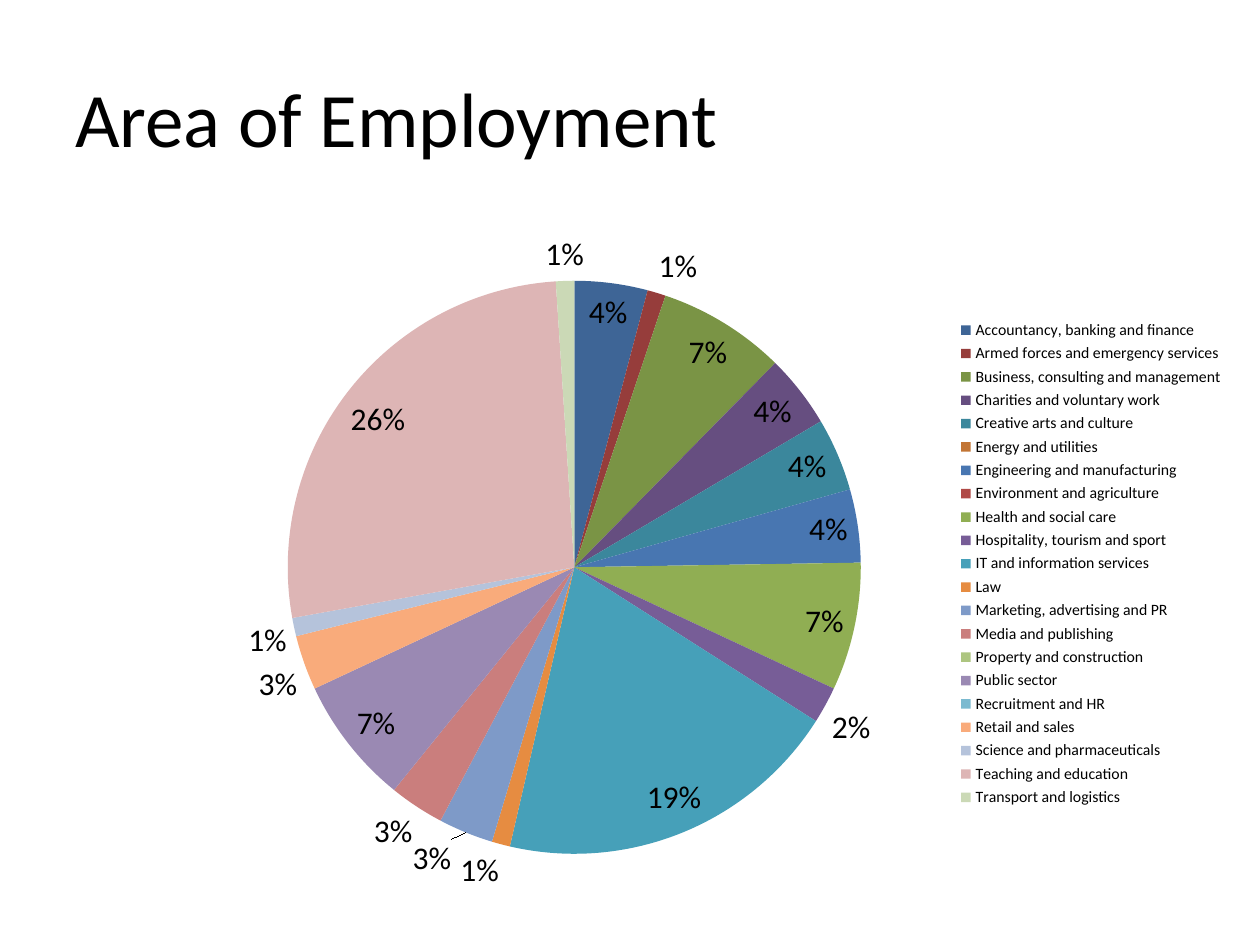
from dataclasses import dataclass

from lxml.etree import SubElement
from pptx import Presentation
from pptx.chart.data import CategoryChartData
from pptx.dml.color import RGBColor
from pptx.enum.chart import (XL_CHART_TYPE as ChartType, XL_LABEL_POSITION as LabelPos,
                             XL_LEGEND_POSITION as LegendPos)
from pptx.enum.text import MSO_ANCHOR as Anchor
from pptx.oxml.ns import qn
from pptx.util import Pt


@dataclass(frozen=True)
class Theme:
    font: str = "Calibri"
    ink: str = "000000"
    title_size: int = 44
    label_size: int = 18
    legend_size: int = 9


# Area of employment, share in percent, slice colour
EMPLOYMENT = [
    ("Accountancy, banking and finance", 4, "3E6596"),
    ("Armed forces and emergency services", 1, "963D3B"),
    ("Business, consulting and management", 7, "7A9445"),
    ("Charities and voluntary work", 4, "664E80"),
    ("Creative arts and culture", 4, "3B879C"),
    ("Energy and utilities", 0, "C27535"),
    ("Engineering and manufacturing", 4, "4876B1"),
    ("Environment and agriculture", 0, "B04946"),
    ("Health and social care", 7, "90AE53"),
    ("Hospitality, tourism and sport", 2, "775D97"),
    ("IT and information services", 19, "46A0B9"),
    ("Law", 1, "E68C41"),
    ("Marketing, advertising and PR", 3, "7E9AC8"),
    ("Media and publishing", 3, "CA7E7D"),
    ("Property and construction", 0, "ADC580"),
    ("Public sector", 7, "9A89B3"),
    ("Recruitment and HR", 0, "7BBAD0"),
    ("Retail and sales", 3, "F9AB7B"),
    ("Science and pharmaceuticals", 1, "B5C3DB"),
    ("Teaching and education", 26, "DDB5B5"),
    ("Transport and logistics", 1, "CBD9B6"),
]


class SlideBuilder:
    def __init__(self, slide, theme):
        self.slide = slide
        self.theme = theme

    def style_font(self, font, size):
        font.name = self.theme.font
        font.size = Pt(size)
        font.color.rgb = RGBColor.from_string(self.theme.ink)

    def title(self, text, left, top, width, height):
        frame = self.slide.shapes.add_textbox(
            Pt(left), Pt(top), Pt(width), Pt(height)).text_frame
        frame.word_wrap = True
        frame.vertical_anchor = Anchor.MIDDLE
        frame.text = text
        self.style_font(frame.paragraphs[0].runs[0].font, self.theme.title_size)

    def pie(self, rows, left, top, width, height, plot_area):
        names, shares, colors = zip(*rows)
        data = CategoryChartData()
        data.categories = names
        data.add_series("Series 1", shares)
        chart = self.slide.shapes.add_chart(
            ChartType.PIE, Pt(left), Pt(top), Pt(width), Pt(height), data).chart
        chart.has_title = False
        self.style_font(chart.font, self.theme.label_size)

        # Legend
        chart.has_legend = True
        chart.legend.position = LegendPos.RIGHT
        chart.legend.include_in_layout = False
        self.style_font(chart.legend.font, self.theme.legend_size)

        # Slices
        plot = chart.plots[0]
        plot.vary_by_categories = True
        for index, color in enumerate(colors):
            fill = plot.series[0].points[index].format.fill
            fill.solid()
            fill.fore_color.rgb = RGBColor.from_string(color)

        # Labels: the rounded shares do not add up to 100, so show them as given
        plot.has_data_labels = True
        labels = plot.data_labels
        labels.show_value = True
        labels.show_percentage = False
        labels.number_format = '0"%"'
        labels.number_format_is_linked = False
        labels.position = LabelPos.BEST_FIT
        self.style_font(labels.font, self.theme.label_size)
        self.place_plot(chart, plot_area)

    def place_plot(self, chart, plot_area):
        """Fix the inner plot area, given as fractions of the chart."""
        area = chart.element.find(".//" + qn("c:plotArea"))
        layout = area.find(qn("c:layout"))
        if layout is None:
            layout = area.makeelement(qn("c:layout"), {})
            area.insert(0, layout)
        manual = SubElement(layout, qn("c:manualLayout"))
        settings = [("layoutTarget", "inner"), ("xMode", "edge"), ("yMode", "edge"),
                    *zip("xywh", plot_area)]
        for tag, value in settings:
            SubElement(manual, qn("c:" + tag), val=str(value))


def main():
    deck = Presentation()
    deck.slide_width, deck.slide_height = Pt(720), Pt(540)
    builder = SlideBuilder(deck.slides.add_slide(deck.slide_layouts[6]), Theme())

    # Heading
    builder.title("Area of Employment", 36, 21.6, 648, 90)

    # Employment shares
    builder.pie(EMPLOYMENT, 110.9, 122.4, 595.4, 399.6,
                plot_area=(0.09, 0.09, 0.55, 0.83))

    deck.save("out.pptx")


if __name__ == "__main__":
    main()
